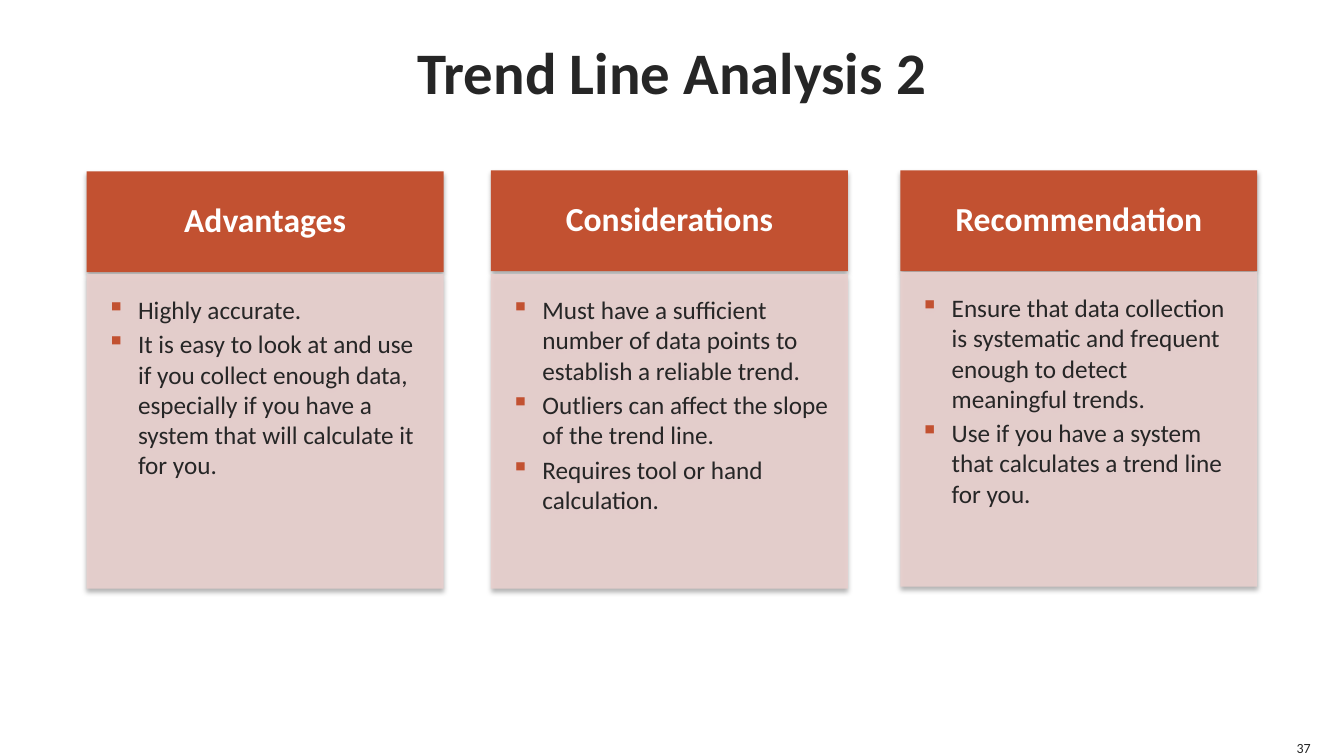
import pptx
import pptx.util
import pptx.dml.color
import pptx.enum.shapes
import pptx.enum.text
import pptx.oxml
from dataclasses import dataclass

Inches = pptx.util.Inches
Pt = pptx.util.Pt
Align = pptx.enum.text.PP_ALIGN
Anchor = pptx.enum.text.MSO_ANCHOR
NS = 'xmlns:a="http://schemas.openxmlformats.org/drawingml/2006/main"'

TITLE = "Trend Line Analysis 2"
PAGE_NUMBER = "37"
CARDS = [
    {"heading": "Advantages", "left": 0.86, "top": 1.7, "list_top": 2.72, "points": [
        "Highly accurate.",
        "It is easy to look at and use if you collect enough data, especially if you "
        "have a system that will calculate it for you."]},
    {"heading": "Considerations", "left": 4.87, "top": 1.69, "list_top": 2.72, "points": [
        "Must have a sufficient number of\u00a0data points to establish a reliable trend.",
        "Outliers can affect the slope of the trend line.",
        "Requires tool or hand calculation."]},
    {"heading": "Recommendation", "left": 8.93, "top": 1.69, "list_top": 2.7, "points": [
        "Ensure that data collection is systematic and frequent enough to detect "
        "meaningful trends.",
        "Use if you have a system that calculates a trend line for you."]},
]
CARD_WIDTH, HEADING_HEIGHT, LIST_HEIGHT = 3.54, 1, 3.12


@dataclass(frozen=True)
class Theme:
    font: str = "Calibri"
    ink: str = "262626"
    accent: str = "C25131"
    tint: str = "E9D0CE"
    white: str = "FFFFFF"
    title_size: int = 42
    heading_size: int = 24
    list_size: int = 18
    number_size: int = 10


THEME = Theme()


def rgb(color):
    return pptx.dml.color.RGBColor.from_string(color)


def xml(markup):
    return pptx.oxml.parse_xml(markup.replace(">", f" {NS}>", 1))


def style(paragraph, size, color, align, bold=False):
    paragraph.alignment = align
    font = paragraph.font
    font.name, font.size, font.bold = THEME.font, Pt(size), bold
    font.color.rgb = rgb(color)


def set_frame(frame, anchor, insets, wrap=True):
    frame.word_wrap = wrap
    frame.vertical_anchor = anchor
    frame.margin_left, frame.margin_top, frame.margin_right, frame.margin_bottom = map(Inches, insets)


def add_panel(slide, left, top, height, color):
    panel = slide.shapes.add_shape(
        pptx.enum.shapes.MSO_SHAPE.RECTANGLE,
        Inches(left), Inches(top), Inches(CARD_WIDTH), Inches(height))
    panel.fill.solid()
    panel.fill.fore_color.rgb = rgb(color)
    panel.line.fill.background()
    panel.shadow.inherit = False
    effects = panel.element.spPr.find(pptx.oxml.ns.qn("a:effectLst"))
    effects.append(xml(
        f'<a:outerShdw blurRad="{Pt(3.5)}" dist="{Pt(2.2)}" dir="5400000" rotWithShape="0">'
        '<a:srgbClr val="000000"><a:alpha val="32000"/></a:srgbClr></a:outerShdw>'))
    return panel


def add_heading(slide, card):
    heading = add_panel(slide, card["left"], card["top"], HEADING_HEIGHT, THEME.accent)
    frame = heading.text_frame
    set_frame(frame, Anchor.MIDDLE, (0.19, 0.11, 0.19, 0.11))
    frame.text = card["heading"]
    frame.paragraphs[0].line_spacing = 0.9
    style(frame.paragraphs[0], THEME.heading_size, THEME.white, Align.CENTER, True)


def add_points(slide, card):
    points = add_panel(slide, card["left"], card["list_top"], LIST_HEIGHT, THEME.tint)
    fill_color = points.element.spPr.find(".//" + pptx.oxml.ns.qn("a:srgbClr"))
    fill_color.append(xml('<a:alpha val="90000"></a:alpha>'))
    frame = points.text_frame
    set_frame(frame, Anchor.TOP, (0.2, 0.2, 0.14, 0.16))
    frame.text = "\n".join(card["points"])
    for point in frame.paragraphs:
        properties = point._p.get_or_add_pPr()
        properties.set("marL", str(Inches(0.31)))
        properties.set("indent", str(Inches(-0.31)))
        properties.append(xml(f'<a:buClr><a:srgbClr val="{THEME.accent}"/></a:buClr>'))
        properties.append(xml('<a:buChar char="▪"></a:buChar>'))
        point.space_after = Pt(3)
        style(point, THEME.list_size, THEME.ink, Align.LEFT)


def main():
    deck = pptx.Presentation()
    deck.slide_width, deck.slide_height = Inches(13.33), Inches(7.5)
    slide = deck.slides.add_slide(deck.slide_layouts[5])

    title = slide.shapes.title
    title.left, title.top, title.width, title.height = map(Inches, (0.5, 0, 12.33, 1.4))
    title.text_frame.text = TITLE
    set_frame(title.text_frame, Anchor.MIDDLE, (0, 0, 0, 0))
    style(title.text_frame.paragraphs[0], THEME.title_size, THEME.ink, Align.CENTER, True)

    for card in CARDS:
        add_heading(slide, card)
        add_points(slide, card)

    number = slide.shapes.add_textbox(*map(Inches, (12.83, 7.33, 0.17, 0.17)))
    number.text_frame.text = PAGE_NUMBER
    set_frame(number.text_frame, Anchor.BOTTOM, (0, 0, 0, 0), wrap=False)
    number.text_frame.auto_size = pptx.enum.text.MSO_AUTO_SIZE.SHAPE_TO_FIT_TEXT
    style(number.text_frame.paragraphs[0], THEME.number_size, THEME.ink, Align.RIGHT)

    deck.save("out.pptx")


if __name__ == "__main__":
    main()
